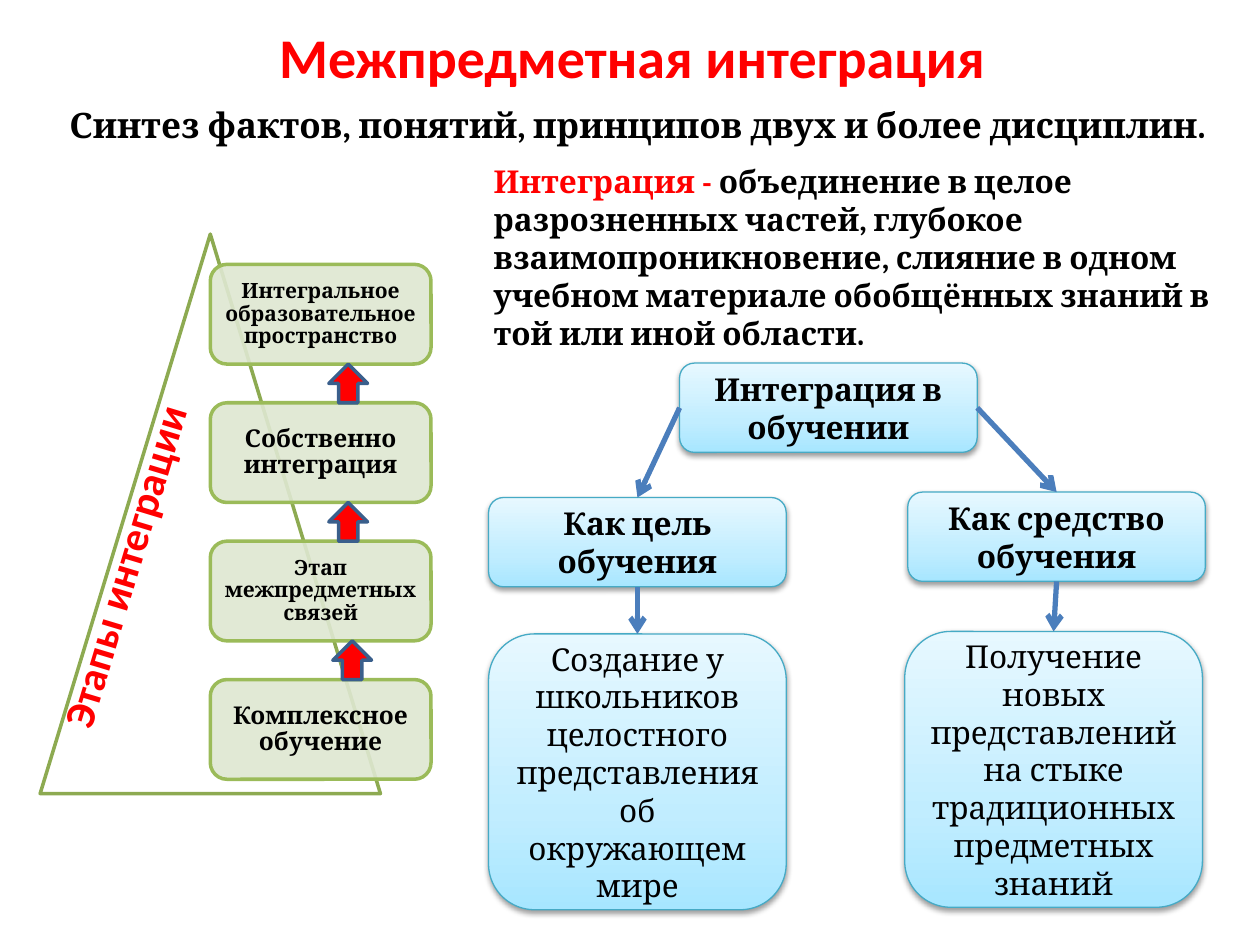
import copy

import pptx
import pptx.dml.color
import pptx.enum.shapes
import pptx.enum.text
import pptx.oxml.ns
import pptx.util
from lxml import etree

Cm, Pt = pptx.util.Cm, pptx.util.Pt
SHAPES = pptx.enum.shapes.MSO_SHAPE
ALIGN = pptx.enum.text.PP_ALIGN
qn = pptx.oxml.ns.qn

BLACK, RED, WHITE = "000000", "FF0000", "FFFFFF"

# Texts: runs of (wording, colour), place in cm, format
HEADINGS = [
    ([("Межпредметная интеграция", RED)], (4.57, 0.33, 16.36, 1.63),
     dict(size=32, font="Calibri", wrap=False)),
    ([("Синтез фактов, понятий, принципов двух и более дисциплин.", BLACK)],
     (0.3, 1.96, 25.1, 1.12), dict(size=20)),
    ([("Интеграция - ", RED),
      ("объединение в целое разрозненных частей, глубокое взаимопроникновение, "
       "слияние в одном учебном материале обобщённых знаний в той или иной области.", BLACK)],
     (9.7, 3.15, 15.01, 4.11), dict(size=18, align=ALIGN.LEFT)),
]
PYRAMID_LABEL = [("Этапы интеграции", RED)]
STAGES = [  # top to bottom: wording, text size
    ("Интегральное образовательное пространство", 12),
    ("Собственно интеграция", 14),
    ("Этап межпредметных связей", 12),
    ("Комплексное обучение", 14),
]
STAGE_LEFT, STAGE_TOP, STAGE_WIDTH, STAGE_HEIGHT, STAGE_STEP = 4.24, 5.33, 4.45, 2.01, 2.79
ARROW_LEFTS = [6.63, 6.63, 6.71]

BRANCH_WIDTH, HEAD_HEIGHT, DETAIL_HEIGHT = 6, 1.8, 5.56
BRANCHES = {  # wording, left, top, height, bold
    "root": ("Интеграция в обучении", 13.7, 7.32, HEAD_HEIGHT, True),
    "goal": ("Как цель обучения", 9.85, 10.03, HEAD_HEIGHT, True),
    "means": ("Как средство обучения", 18.3, 9.92, HEAD_HEIGHT, True),
    "goal detail": ("Создание у школьников целостного представления об окружающем мире",
                    9.85, 12.78, DETAIL_HEIGHT, False),
    "means detail": ("Получение новых представлений на стыке традиционных предметных знаний",
                     18.24, 12.73, DETAIL_HEIGHT, False),
}
TOP, LEFT, BOTTOM, RIGHT = range(4)
LINKS = [
    ("root", LEFT, "goal", TOP),
    ("root", RIGHT, "means", TOP),
    ("goal", BOTTOM, "goal detail", TOP),
    ("means", BOTTOM, "means detail", TOP),
]
GRADIENT = [(0, "A7E6FF"), (0.35, "C1EDFF"), (1, "E7F8FF")]


def rgb(value):
    return pptx.dml.color.RGBColor.from_string(value)


def write(shape, runs, size, font="Cambria", bold=True, align=ALIGN.CENTER,
          wrap=True, spacing=None, **frame_format):
    frame = shape.text_frame
    for name, value in dict(word_wrap=wrap, **frame_format).items():
        setattr(frame, name, value)
    para = frame.paragraphs[0]
    para.alignment, para.line_spacing = align, spacing
    for text, color in runs:
        span = para.add_run()
        span.text = text
        for name, value in dict(size=Pt(size), name=font, bold=bold).items():
            setattr(span.font, name, value)
        span.font.color.rgb = rgb(color)


def add_text(page, runs, place, **text_format):
    box = page.shapes.add_textbox(*map(Cm, place))
    write(box, runs, **text_format)
    return box


def add_shape(page, kind, place, line, width, fill=None):
    shape = page.shapes.add_shape(kind, *map(Cm, place))
    shape.shadow.inherit = False
    shape.line.color.rgb = rgb(line)
    shape.line.width = Pt(width)
    if fill:
        shape.fill.solid()
        shape.fill.fore_color.rgb = rgb(fill)
    return shape


def set_opacity(shape, percent):
    color = shape._element.spPr.find(qn("a:solidFill"))[0]
    etree.SubElement(color, qn("a:alpha"), val=str(percent * 1000))


def set_gradient(shape, stops):
    shape.fill.gradient()
    shape.fill.gradient_angle = 90
    stop_list = shape._element.spPr.find(qn("a:gradFill")).find(qn("a:gsLst"))
    while len(stop_list) < len(stops):
        stop_list.append(copy.deepcopy(stop_list[0]))
    for stop, (position, color) in zip(shape.fill.gradient_stops, stops):
        stop.position = position
        stop.color.rgb = rgb(color)


def drop_shadow(shape):
    effects = shape._element.spPr.find(qn("a:effectLst"))
    shadow = etree.SubElement(effects, qn("a:outerShdw"), blurRad="40000", dist="20000",
                              dir="5400000", rotWithShape="0")
    color = etree.SubElement(shadow, qn("a:srgbClr"), val=BLACK)
    etree.SubElement(color, qn("a:alpha"), val="38000")


def add_link(page, start, start_side, end, end_side):
    link = page.shapes.add_connector(pptx.enum.shapes.MSO_CONNECTOR.STRAIGHT, 0, 0, 0, 0)
    link.begin_connect(start, start_side)
    link.end_connect(end, end_side)
    link.line.color.rgb = rgb("4B7EBC")
    link.line.width = Pt(3)
    etree.SubElement(link.line._get_or_add_ln(), qn("a:tailEnd"), type="arrow")
    etree.SubElement(link._element.spPr, qn("a:effectLst"))


def add_pyramid(page):
    middle = pptx.enum.text.MSO_ANCHOR.MIDDLE
    add_shape(page, SHAPES.ISOSCELES_TRIANGLE, (0.81, 4.72, 6.86, 11.28), "8DAA51", 2, WHITE)
    margins = {f"margin_{side}": Cm(0.03) for side in ("left", "top", "right", "bottom")}
    for row, (text, size) in enumerate(STAGES):
        place = STAGE_LEFT, STAGE_TOP + row * STAGE_STEP, STAGE_WIDTH, STAGE_HEIGHT
        stage = add_shape(page, SHAPES.ROUNDED_RECTANGLE, place, "9BBB59", 2, "DEE7D1")
        set_opacity(stage, 90)
        write(stage, [(text, BLACK)], size, spacing=0.9, vertical_anchor=middle, **margins)
    gap = STAGE_STEP - STAGE_HEIGHT
    for row, left in enumerate(ARROW_LEFTS):
        top = STAGE_TOP + row * STAGE_STEP + STAGE_HEIGHT
        add_shape(page, SHAPES.UP_ARROW, (left, top, gap, gap), "3A5F8C", 2, RED)
    label = add_text(page, PYRAMID_LABEL, (-1.63, 10.77, 8.23, 1.27),
                     size=24, font="Calibri", wrap=False)
    label.rotation = 286.7


def add_branches(page):
    boxes = {}
    for key, (text, left, top, height, bold) in BRANCHES.items():
        box = add_shape(page, SHAPES.ROUNDED_RECTANGLE,
                        (left, top, BRANCH_WIDTH, height), "46AAC5", 0.75)
        set_gradient(box, GRADIENT)
        drop_shadow(box)
        write(box, [(text, BLACK)], 18, bold=bold,
              vertical_anchor=pptx.enum.text.MSO_ANCHOR.MIDDLE)
        boxes[key] = box
    for start, start_side, end, end_side in LINKS:
        add_link(page, boxes[start], start_side, boxes[end], end_side)


def main():
    deck = pptx.Presentation()
    deck.slide_width, deck.slide_height = Cm(25.4), Cm(19.05)
    page = deck.slides.add_slide(deck.slide_layouts[6])
    for runs, place, text_format in HEADINGS:
        add_text(page, runs, place, **text_format)
    add_pyramid(page)
    add_branches(page)
    deck.save("out.pptx")


if __name__ == "__main__":
    main()
